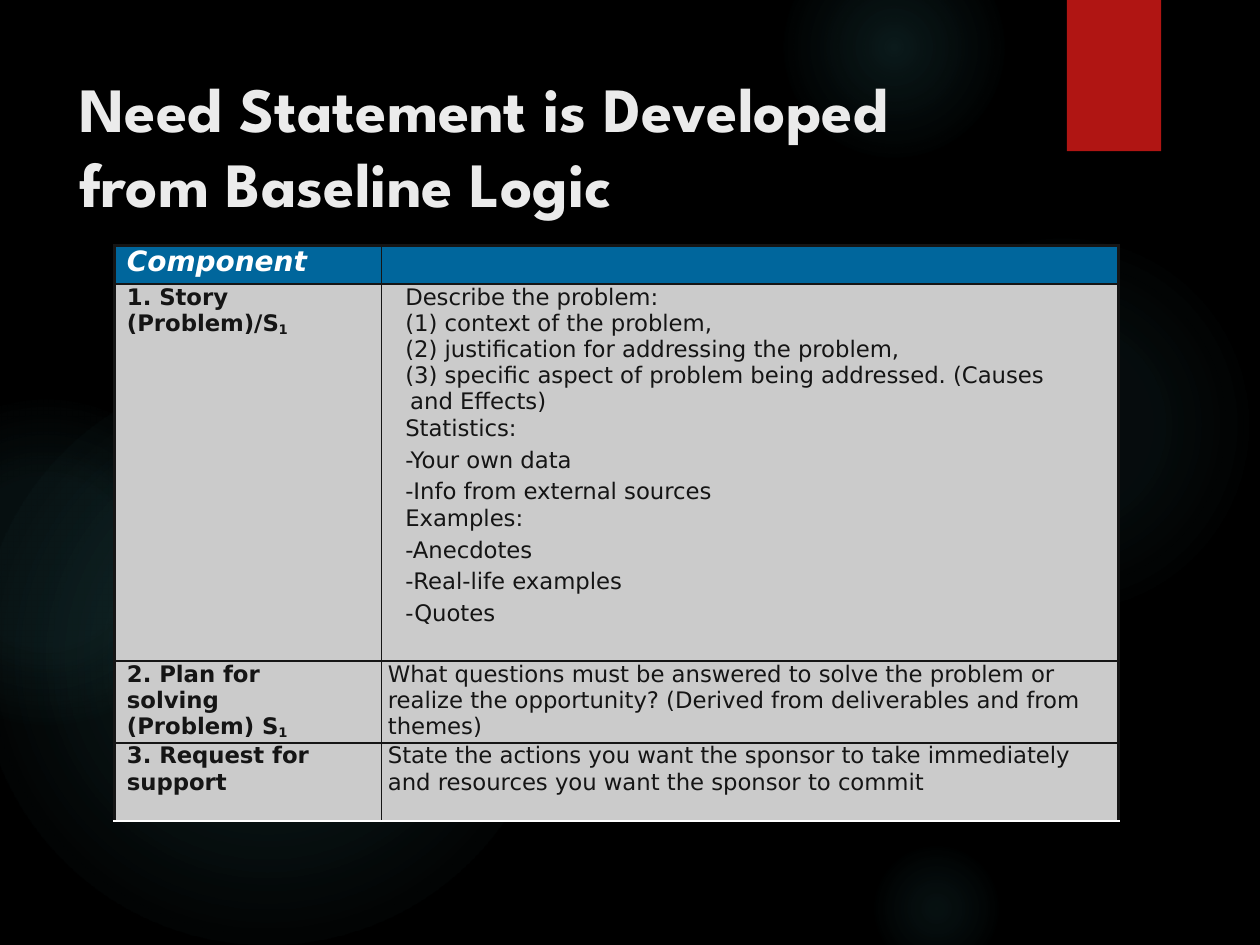
"""Build the slide on deriving a need statement from baseline logic."""
from lxml import etree
from pptx import Presentation
from pptx.dml.color import RGBColor
from pptx.enum.shapes import MSO_SHAPE
from pptx.enum.text import MSO_ANCHOR, PP_ALIGN
from pptx.oxml import parse_xml
from pptx.oxml.ns import nsdecls, qn
from pptx.util import Cm, Pt

OVAL, RECT = MSO_SHAPE.OVAL, MSO_SHAPE.RECTANGLE
TOP, LEFT = MSO_ANCHOR.TOP, PP_ALIGN.LEFT
COLORS = {"bg": "000000", "glow": "50B9C1", "tab": "B01513", "title": "EBEBEB",
          "head": "00669C", "body": "CBCBCB", "ink": "151515", "white": "FFFFFF"}


def rgb(name):
    return RGBColor.from_string(COLORS[name])


def add_border(cell, side, width):
    ln = etree.SubElement(cell._tc.get_or_add_tcPr(), qn(f"a:{side}"), w=str(Pt(width)))
    fill = etree.SubElement(ln, qn("a:solidFill"))
    etree.SubElement(fill, qn("a:srgbClr"), val=COLORS["ink"])


prs = Presentation()
prs.slide_width, prs.slide_height = Cm(25.4), Cm(19.05)
s = prs.slides.add_slide(prs.slide_layouts[5])
s.background.fill.solid()
s.background.fill.fore_color.rgb = rgb("bg")

glows = [
    (17.5, 4.65, 7.82, [(0, 7), (36, 6), (69, 0)]),
    (15.8, -1.27, 4.45, [(0, 14), (36, 7), (73, 0)]),
    (17.5, 16.94, 2.74, [(0, 9), (36, 5), (66, 0)]),
    (-0.43, 7.42, 11.63, [(0, 11), (36, 10), (75, 0)]),
    (-2.34, 8.05, 6.55, [(0, 8), (36, 8), (72, 0)]),
]
for x, y, size, stops in glows:
    sp = s.shapes.add_shape(OVAL, Cm(x), Cm(y), Cm(size), Cm(size))
    sp.shadow.inherit = False
    sp.line.fill.background()
    gs = "".join(f'<a:gs pos="{pos * 1000}"><a:srgbClr val="{COLORS["glow"]}">'
                 f'<a:alpha val="{alpha * 1000}"/></a:srgbClr></a:gs>' for pos, alpha in stops)
    sp._element.spPr.find(qn("a:prstGeom")).addnext(parse_xml(
        f'<a:gradFill {nsdecls("a")}><a:gsLst>{gs}</a:gsLst><a:path path="circle">'
        '<a:fillToRect l="50000" t="50000" r="50000" b="50000"/></a:path></a:gradFill>'))

sp = s.shapes.add_shape(RECT, Cm(21.51), Cm(0), Cm(1.9), Cm(3.05))
sp.shadow.inherit = False
sp.fill.solid()
sp.fill.fore_color.rgb = rgb("tab")
sp.line.fill.background()

title = s.shapes.title
s.shapes._spTree.append(title._element)
title.left, title.top, title.width, title.height = Cm(1.35), Cm(1.27), Cm(19.61), Cm(3.89)
tf = title.text_frame
tf.text = "Need Statement is Developed from Baseline Logic"
tf.word_wrap = True
tf.vertical_anchor = TOP
p = tf.paragraphs[0]
p.alignment = LEFT
font = p.runs[0].font
font.name, font.size, font.bold = "League Spartan", Pt(36), True
font.color.rgb = rgb("title")

problem = [
    "Describe the problem:",
    "(1) context of the problem,",
    "(2) justification for addressing the problem,",
    "(3) specific aspect of problem being addressed. (Causes and Effects)",
    "Statistics:", "-Your own data", "-Info from external sources",
    "Examples:", "-Anecdotes", "-Real-life examples", "-Quotes",
]
rows = [
    (0.64, "Component", []),
    (7.6, "1. Story (Problem)/S_1", problem),
    (1.65, "2. Plan for solving (Problem) S_1",
     ["What questions must be answered to solve the problem or realize the opportunity? "
      "(Derived from deliverables and from themes)"]),
    (1.57, "3. Request for support",
     ["State the actions you want the sponsor to take immediately "
      "and resources you want the sponsor to commit"]),
]
frame = s.shapes.add_table(len(rows), 2, Cm(2.31), Cm(4.95), Cm(20.24), Cm(11.46))
table = frame.table
table.columns[0].width, table.columns[1].width = Cm(5.38), Cm(14.86)

for i, (height, component, details) in enumerate(rows):
    table.rows[i].height = Cm(height)
    header = i == 0
    for j, lines in enumerate([[component], details]):
        cell = table.cell(i, j)
        cell.margin_left = cell.margin_top = cell.margin_bottom = 0
        cell.margin_right = Cm(0.7) if (i, j) in [(1, 1), (2, 0)] else 0
        add_border(cell, "lnL", 1 if j else 2.25)
        add_border(cell, "lnR", 2.25 if j else 1)
        add_border(cell, "lnT", 2.25 if header else 1)
        if i < len(rows) - 1:
            add_border(cell, "lnB", 1)
        cell.fill.solid()
        cell.fill.fore_color.rgb = rgb("head" if header else "body")
        tf = cell.text_frame
        for k, line in enumerate(lines):
            p = tf.paragraphs[0] if k == 0 else tf.add_paragraph()
            text, _, subscript = line.partition("_")
            p.text = text
            if subscript:
                p.add_run().text = subscript
                p.runs[1].font._element.set("baseline", "-15000")
            indent, hanging = (0.13 if j else 0.25), 0
            if lines is problem:
                indent, hanging = (0.58, -0.1) if k < 4 else (0.48, 0)
            pPr = p._p.get_or_add_pPr()
            pPr.set("marL", str(Cm(indent)))
            pPr.set("indent", str(Cm(hanging)))
            p.space_before = Pt(3.2 if line.startswith("-") else 0)
            for r in p.runs:
                r.font.name, r.font.size = "DejaVu Sans", Pt(16 if header else 13)
                r.font.bold, r.font.italic = j == 0, header
                r.font.color.rgb = rgb("white" if header else "ink")

prs.save("out.pptx")
